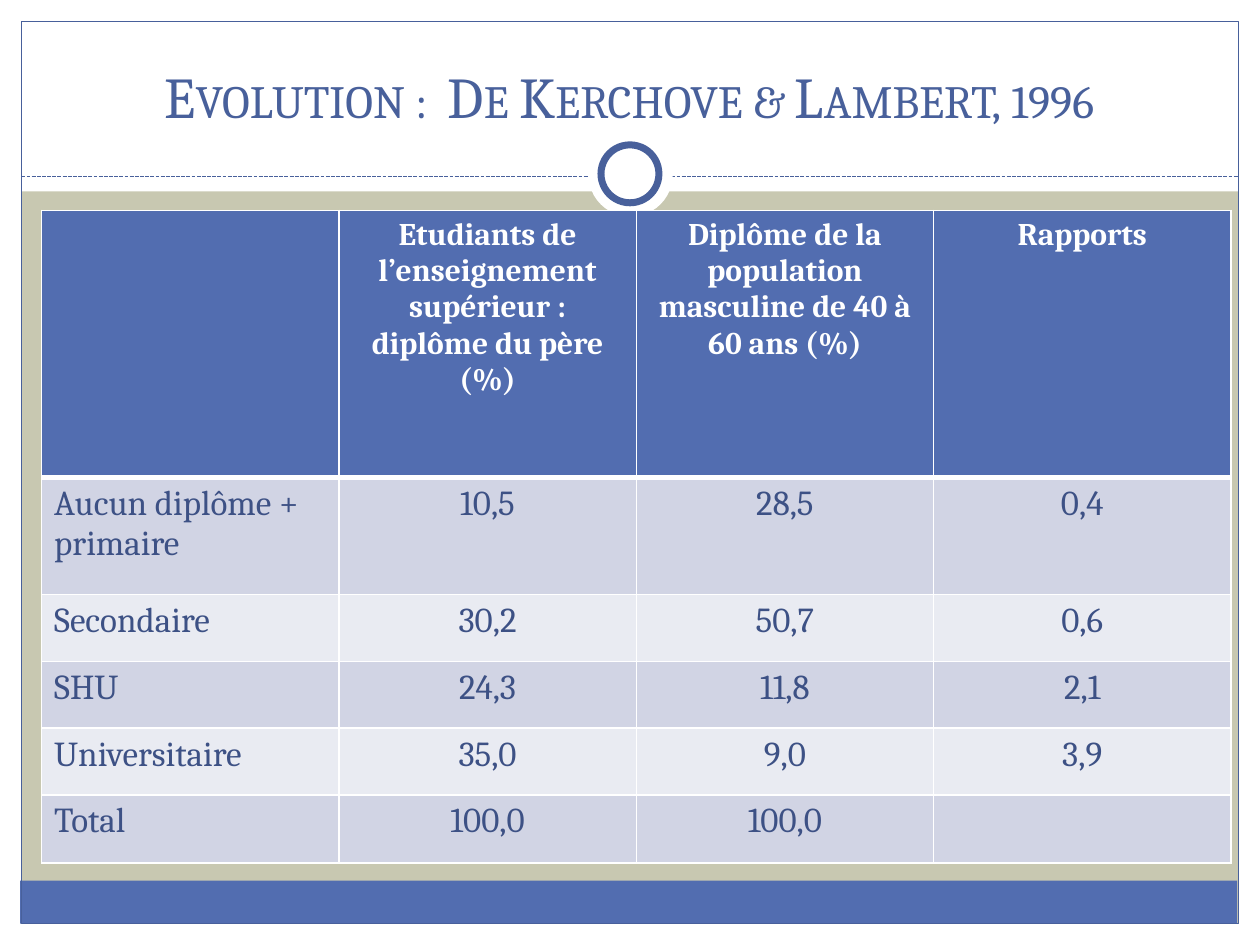
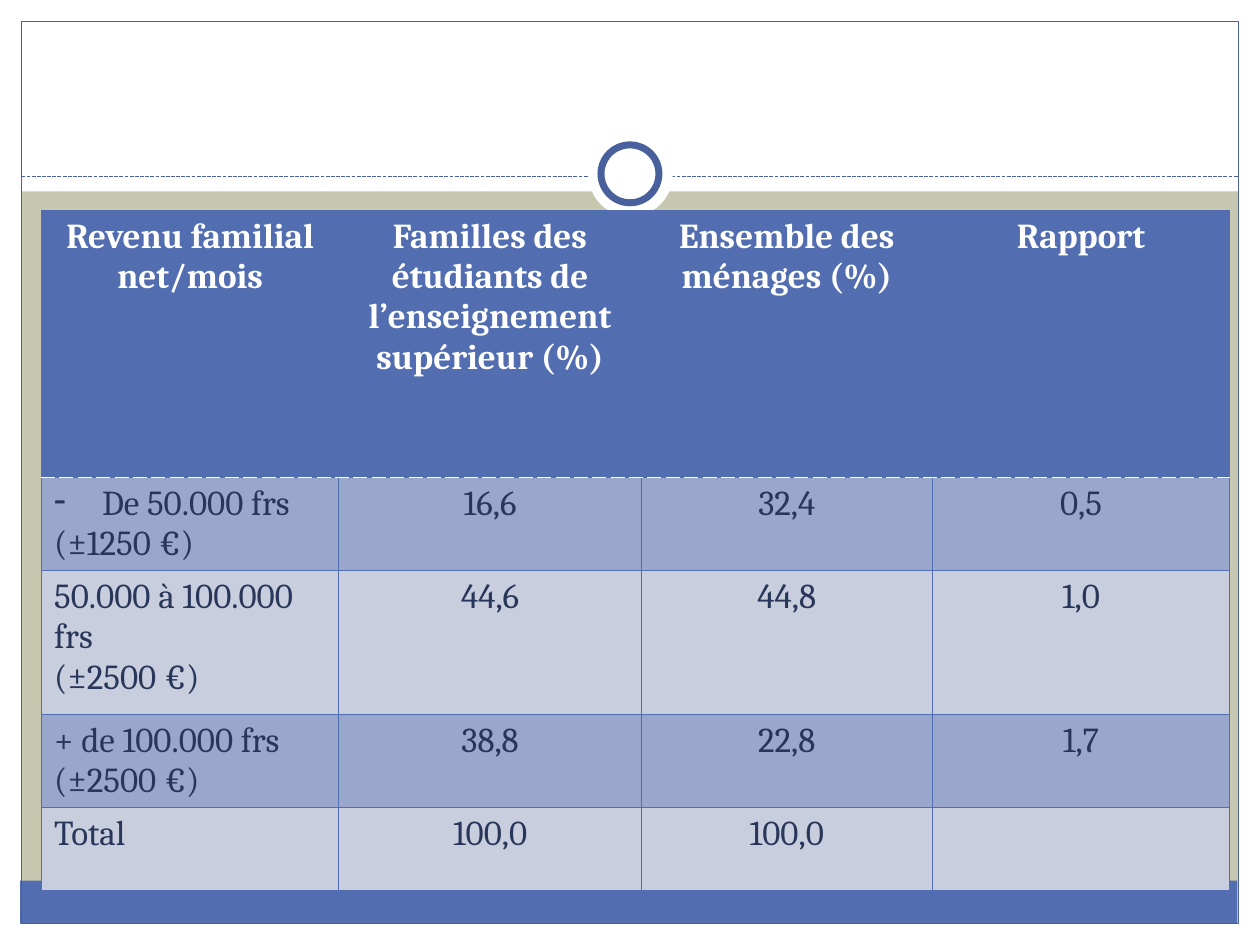
from dataclasses import dataclass

from lxml import etree
from pptx import Presentation
from pptx import util as u
from pptx.dml.color import RGBColor
from pptx.enum import dml, shapes, text
from pptx.oxml.ns import qn


@dataclass(frozen=True)
class Theme:
    font: str = "Cambria"
    back: str = "C8C8B1"
    white: str = "FFFFFF"
    blue: str = "526DB0"
    outline: str = "48609B"
    title_size: float = 33
    body_size: float = 20
    small_head_size: float = 18
    hairline: float = 0.75
    ring: float = 4


@dataclass(frozen=True)
class TableLook:
    head_size: float
    ink: str
    bands: tuple
    border: tuple
    head_rule: tuple


T = Theme()
DIPLOMA_LOOK = TableLook(T.small_head_size, "3D5185", ("D1D4E4", "E9EBF2"),
                         (T.white, 1, "solid"), (T.white, 3, "solid"))
INCOME_LOOK = TableLook(T.body_size, "283659", ("9AA7CC", "C9CEDE"),
                        (T.blue, 0.75, "solid"), (T.white, 0.9, "sysDash"))

DIPLOMAS = [
    ["", "Etudiants de l’enseignement supérieur : diplôme du père (%)",
     "Diplôme de la population masculine de 40 à 60 ans (%)", "Rapports"],
    ["Aucun diplôme + primaire", "10,5", "28,5", "0,4"],
    ["Secondaire", "30,2", "50,7", "0,6"],
    ["SHU", "24,3", "11,8", "2,1"],
    ["Universitaire", "35,0", "9,0", "3,9"],
    ["Total", "100,0", "100,0", ""],
]
INCOMES = [
    ["Revenu familial net/mois",
     "Familles des étudiants de l’enseignement supérieur (%)",
     "Ensemble des ménages (%)", "Rapport"],
    ["- De 50.000 frs\n(±1250 €)", "16,6", "32,4", "0,5"],
    ["50.000 à 100.000 frs\n(±2500 €)", "44,6", "44,8", "1,0"],
    ["+ de 100.000 frs\n(±2500 €)", "38,8", "22,8", "1,7"],
    ["Total", "100,0", "100,0", ""],
]


def rgb(color):
    return RGBColor.from_string(color)


def style_run(r, size, color, bold=False):
    r.font.name = T.font
    r.font.size = u.Pt(size)
    r.font.bold = bold
    r.font.color.rgb = rgb(color)


def add_block(s, kind, box, fill=None, line=None, width=T.hairline):
    sp = s.shapes.add_shape(kind, *map(u.Inches, box))
    sp.shadow.inherit = False
    if fill:
        sp.fill.solid()
        sp.fill.fore_color.rgb = rgb(fill)
    else:
        sp.fill.background()
    if line:
        sp.line.color.rgb = rgb(line)
        sp.line.width = u.Pt(width)
    else:
        sp.line.fill.background()


def add_dashed_rule(s, left, right, y):
    cx = s.shapes.add_connector(shapes.MSO_CONNECTOR.STRAIGHT,
                                *map(u.Inches, (left, y, right, y)))
    cx.line.color.rgb = rgb(T.outline)
    cx.line.width = u.Pt(T.hairline)
    cx.line.dash_style = dml.MSO_LINE.SQUARE_DOT
    etree.SubElement(cx._element.spPr, qn("a:effectLst"))


def add_framed_slide(prs):
    s = prs.slides.add_slide(prs.slide_layouts[6])
    s.background.fill.solid()
    s.background.fill.fore_color.rgb = rgb(T.back)
    rect, oval = shapes.MSO_SHAPE.RECTANGLE, shapes.MSO_SHAPE.OVAL
    for margin in ((0, 7.33, 10, 0.17), (0, 0, 10, 1.52),
                   (0, 0, 0.17, 7.5), (9.83, 0, 0.17, 7.5)):
        add_block(s, rect, margin, T.white)
    add_block(s, rect, (0.16, 6.99, 9.66, 0.34), T.blue)
    add_block(s, rect, (0.17, 0.17, 9.66, 7.16), line=T.outline)
    add_dashed_rule(s, 0.17, 9.83, 1.4)
    add_block(s, oval, (4.67, 1.05, 0.67, 0.67), T.white)
    add_block(s, oval, (4.77, 1.15, 0.46, 0.46), T.white, T.outline, T.ring)
    return s


def add_title(s, title):
    sp = s.shapes.add_textbox(*map(u.Inches, (0.33, 0.25, 9.33, 0.83)))
    tf = sp.text_frame
    tf.word_wrap = True
    tf.vertical_anchor = text.MSO_ANCHOR.BOTTOM
    tf.text = title
    p = tf.paragraphs[0]
    p.alignment = text.PP_ALIGN.CENTER
    r = p.runs[0]
    style_run(r, T.title_size, T.outline)
    r._r.get_or_add_rPr().set("cap", "small")


def set_border(cell, side, border):
    color, width, dash = border
    ln = etree.SubElement(cell._tc.get_or_add_tcPr(), qn(f"a:ln{side}"),
                          w=str(u.Pt(width)))
    fill = etree.SubElement(ln, qn("a:solidFill"))
    etree.SubElement(fill, qn("a:srgbClr"), val=color)
    etree.SubElement(ln, qn("a:prstDash"), val=dash)


def set_dash_bullet(p):
    pPr = p._p.get_or_add_pPr()
    pPr.set("marL", str(u.Inches(0.38)))
    pPr.set("indent", str(u.Inches(-0.38)))
    etree.SubElement(pPr, qn("a:buChar"), char="-")


def fill_cell(cell, value, row, col, look):
    head = row == 0
    for side in "LRTB":
        on_rule = (side, row) in (("B", 0), ("T", 1))
        set_border(cell, side, look.head_rule if on_rule else look.border)
    cell.fill.solid()
    cell.fill.fore_color.rgb = rgb(T.blue if head else look.bands[(row - 1) % 2])
    bulleted = value.startswith("- ")
    tf = cell.text_frame
    tf.text = value.removeprefix("- ")
    if bulleted:
        set_dash_bullet(tf.paragraphs[0])
    for p in tf.paragraphs:
        if head or col:
            p.alignment = text.PP_ALIGN.CENTER
        for r in p.runs:
            style_run(r, look.head_size if head else T.body_size,
                      T.white if head else look.ink, head)


def add_data_table(s, data, widths, heights, look):
    box = (0.33, 1.67, sum(widths), sum(heights))
    frame = s.shapes.add_table(len(data), len(widths), *map(u.Inches, box))
    tbl = frame.table
    tbl.horz_banding = False
    for column, width in zip(tbl.columns, widths):
        column.width = u.Inches(width)
    for row, height in zip(tbl.rows, heights):
        row.height = u.Inches(height)
    for i, values in enumerate(data):
        for j, value in enumerate(values):
            fill_cell(tbl.cell(i, j), value, i, j, look)


def main():
    prs = Presentation()
    prs.slide_width, prs.slide_height = u.Inches(10), u.Inches(7.5)

    s = add_framed_slide(prs)
    add_title(s, "Evolution :  De Kerchove & Lambert, 1996")
    add_data_table(s, DIPLOMAS, [2.36] * 4,
                   [2.12, 0.93, 0.53, 0.53, 0.53, 0.54], DIPLOMA_LOOK)

    s = add_framed_slide(prs)
    add_data_table(s, INCOMES, [2.36, 2.4, 2.31, 2.36],
                   [2.12, 0.66, 1.14, 0.66, 0.66], INCOME_LOOK)

    prs.save("out.pptx")


if __name__ == "__main__":
    main()
